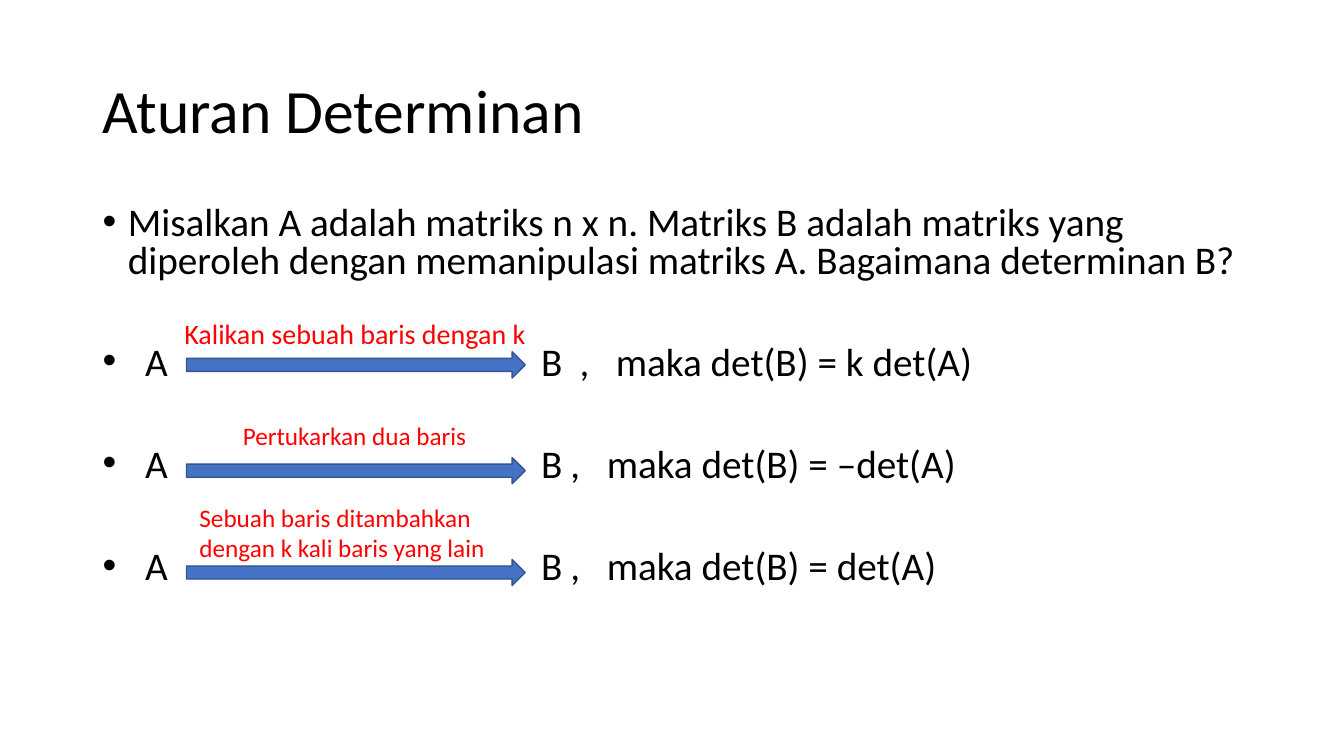
"""Build the slide of determinant rules for row operations."""
from lxml.etree import SubElement
from pptx import Presentation
from pptx.dml.color import RGBColor
from pptx.enum.shapes import MSO_SHAPE
from pptx.enum.text import MSO_ANCHOR
from pptx.oxml.ns import qn
from pptx.util import Inches, Pt

BLACK = RGBColor(0x00, 0x00, 0x00)
RED = RGBColor(0xFF, 0x00, 0x00)
BLUE = RGBColor(0x44, 0x72, 0xC4)
DARK_BLUE = RGBColor(0x32, 0x54, 0x91)

QUESTION = ("Misalkan A adalah matriks n x n. Matriks B adalah matriks yang "
            "diperoleh dengan memanipulasi matriks A. Bagaimana determinan B?")
RULES = [
    ("A\tB\t,\tmaka det(B) = k det(A)", (4.35, 4.73, 5.09)),
    ("A\tB\t,\tmaka det(B) = –det(A)", (4.35, 4.64, 5.0)),
    ("A\tB\t,\tmaka det(B) = det(A)", (4.35, 4.64, 5.0)),
]
OPERATIONS = [
    (3.49, ["Kalikan sebuah baris dengan k"], (1.73, 3.09, 3.62, 0.44), 20),
    (4.54, ["Pertukarkan dua baris"], (2.31, 4.12, 2.44, 0.4), 18),
    (5.55, ["Sebuah baris ditambahkan", "dengan k kali baris yang lain"],
     (1.88, 4.93, 3.06, 0.71), 18),
]


def write_text(paragraph, text, size=28, color=BLACK, spacing=None, before=0,
               indent=None, tabs=()):
    """Write formatted text, bulleted when an indent is given."""
    run = paragraph.add_run()
    run.text = text
    run.font.name = "Calibri"
    run.font.size = Pt(size)
    run.font.color.rgb = color
    paragraph.line_spacing = spacing
    paragraph.space_before = Pt(before)
    if indent is not None:
        properties = paragraph._p.get_or_add_pPr()
        properties.set("marL", str(Inches(indent)))
        properties.set("indent", str(-Inches(indent)))
        SubElement(properties, qn("a:buFont"), typeface="Arial")
        SubElement(properties, qn("a:buChar"), char="•")
        if tabs:
            tab_list = SubElement(properties, qn("a:tabLst"))
            for position in tabs:
                SubElement(tab_list, qn("a:tab"), pos=str(Inches(position)), algn="l")


class SlideBuilder:
    """Holds the arrow style and the current slide."""

    def __init__(self, slide, fill=BLUE, line=DARK_BLUE):
        """Keep the slide and its arrow colours."""
        self.slide = slide
        self.fill = fill
        self.line = line

    def text_box(self, box, paragraphs, anchor=MSO_ANCHOR.TOP, wrap=True):
        """Add a text box with one paragraph per text and format pair."""
        shape = self.slide.shapes.add_textbox(*map(Inches, box))
        frame = shape.text_frame
        frame.word_wrap = wrap
        frame.vertical_anchor = anchor
        for number, (text, style) in enumerate(paragraphs):
            paragraph = frame.add_paragraph() if number else frame.paragraphs[0]
            write_text(paragraph, text, **style)

    def arrow(self, top):
        """Add a block arrow from A to B."""
        box = map(Inches, (1.85, top, 3.36, 0.26))
        shape = self.slide.shapes.add_shape(MSO_SHAPE.RIGHT_ARROW, *box)
        shape.shadow.inherit = False
        shape.fill.solid()
        shape.fill.fore_color.rgb = self.fill
        shape.line.color.rgb = self.line
        shape.line.width = Pt(1)


def main():
    """Create and save the presentation."""
    presentation = Presentation()
    presentation.slide_width = Inches(13.33)
    presentation.slide_height = Inches(7.5)
    slide = presentation.slides.add_slide(presentation.slide_layouts[6])
    builder = SlideBuilder(slide)

    builder.text_box((0.92, 0.4, 11.5, 1.45),
                     [("Aturan Determinan", {"size": 44, "spacing": 0.9})],
                     anchor=MSO_ANCHOR.MIDDLE)
    body = [(QUESTION, {"spacing": 0.8, "before": 10, "indent": 0.25})]
    for text, tabs in RULES:
        body.append((text, {"spacing": 0.8, "before": 46, "indent": 0.42, "tabs": tabs}))
    builder.text_box((0.92, 2, 11.5, 4.76), body)

    for top, lines, box, size in OPERATIONS:
        builder.arrow(top)
        label = [(line, {"size": size, "color": RED}) for line in lines]
        builder.text_box(box, label, wrap=False)

    presentation.save("out.pptx")


if __name__ == "__main__":
    main()
